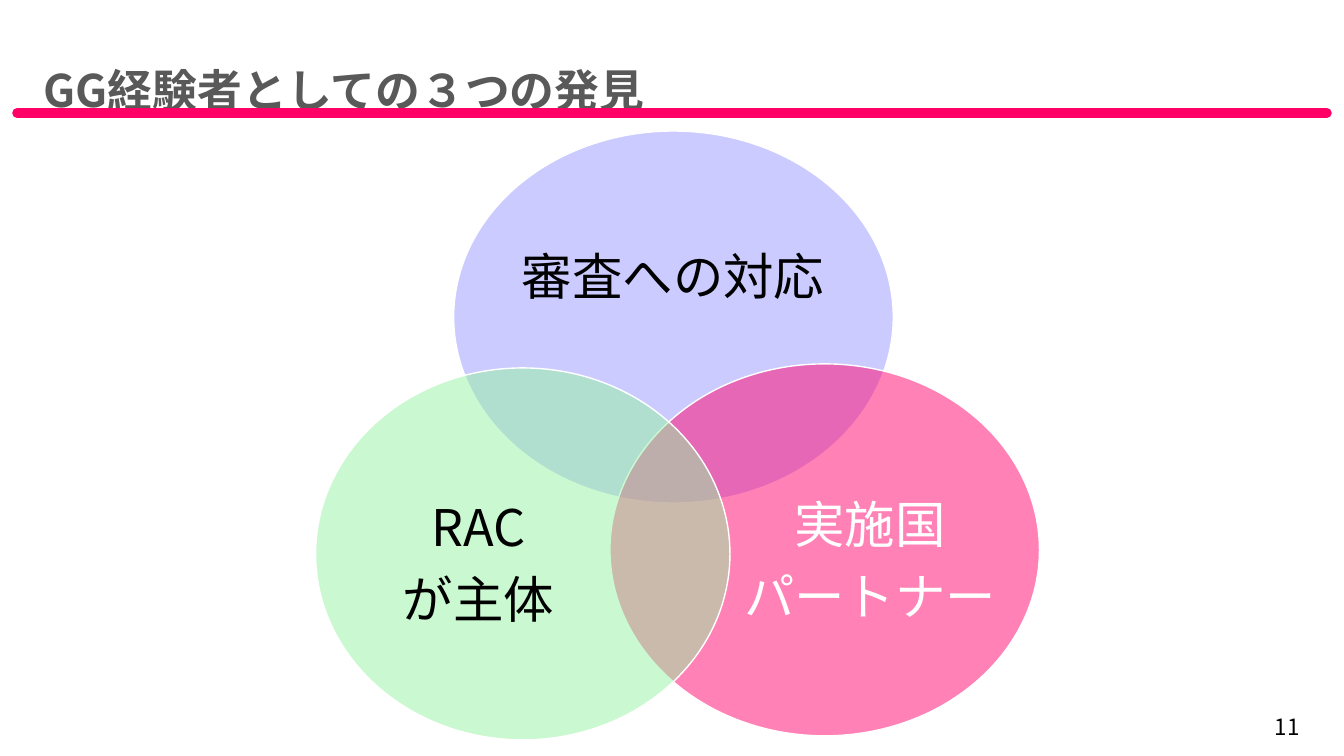
from lxml.etree import SubElement
from pptx import Presentation
from pptx.dml.color import RGBColor
from pptx.enum.shapes import MSO_CONNECTOR, MSO_SHAPE
from pptx.enum.text import MSO_ANCHOR, MSO_AUTO_SIZE, PP_ALIGN
from pptx.oxml.ns import qn
from pptx.util import Inches, Pt

FONT = "Noto Sans CJK JP"
BLACK = RGBColor(0x00, 0x00, 0x00)
WHITE = RGBColor(0xFF, 0xFF, 0xFF)
GRAY = RGBColor(0x59, 0x59, 0x59)
RULE_PINK = RGBColor(0xFF, 0x00, 0x66)
VIOLET = RGBColor(0x99, 0x99, 0xFF)
PINK = RGBColor(0xFF, 0x05, 0x6F)
GREEN = RGBColor(0x97, 0xF3, 0xA2)

# Circle box, fill, label box, label lines, label colour
CIRCLES = [
    ((4.5, 1.3, 4.36, 3.69), VIOLET, (5.08, 1.94, 3.19, 1.66), ["審査への対応"], BLACK),
    ((6.05, 3.61, 4.26, 3.69), PINK, (7.35, 4.57, 2.56, 2.03), ["実施国", "パートナー"], WHITE),
    ((3.13, 3.65, 4.11, 3.69), GREEN, (3.51, 4.6, 2.47, 2.03), ["RAC", "が主体"], BLACK),
]


def inches(box):
    return [Inches(v) for v in box]


def style_paragraph(p, size, color, align, bold=False):
    p.alignment = align
    p.font.name = FONT
    p.font.size = Pt(size)
    p.font.bold = bold
    p.font.color.rgb = color
    SubElement(p._p.pPr.find(qn("a:defRPr")), qn("a:ea"), typeface=FONT)


def space_after_percent(p, percent):
    p.space_after = Pt(0)
    spacing = p._p.pPr.find(qn("a:spcAft"))
    spacing.remove(spacing[0])
    SubElement(spacing, qn("a:spcPct"), val=str(percent * 1000))


def add_title(s, text, box):
    title = s.shapes.title
    title.left, title.top, title.width, title.height = inches(box)
    tf = title.text_frame
    tf.text = text
    tf.word_wrap = True
    tf.auto_size = MSO_AUTO_SIZE.NONE
    tf.vertical_anchor = MSO_ANCHOR.TOP
    p = tf.paragraphs[0]
    p.line_spacing = 2.0
    style_paragraph(p, 32, GRAY, PP_ALIGN.LEFT, bold=True)


def add_rule(s, left, right, y):
    rule = s.shapes.add_connector(
        MSO_CONNECTOR.STRAIGHT, Inches(left), Inches(y), Inches(right), Inches(y))
    rule.line.color.rgb = RULE_PINK
    rule.line.width = Pt(7)
    rule.line._ln.set("cap", "rnd")
    SubElement(rule._element.spPr, qn("a:effectLst"))


def add_circle(s, box, color):
    circle = s.shapes.add_shape(MSO_SHAPE.OVAL, *inches(box))
    circle.shadow.inherit = False
    circle.fill.solid()
    circle.fill.fore_color.rgb = color
    rgb = circle._element.spPr.find(qn("a:solidFill"))[0]
    SubElement(rgb, qn("a:alpha"), val="50000")
    circle.line.color.rgb = WHITE
    circle.line.width = Pt(1)


def add_label(s, box, lines, color):
    tf = s.shapes.add_textbox(*inches(box)).text_frame
    tf.word_wrap = True
    tf.vertical_anchor = MSO_ANCHOR.MIDDLE
    tf.margin_left = tf.margin_right = tf.margin_top = tf.margin_bottom = 0
    tf.text = "\n".join(lines)
    for p in tf.paragraphs:
        p.line_spacing = 0.9
        space_after_percent(p, 35)
        style_paragraph(p, 36, color, PP_ALIGN.CENTER)


def add_page_number(s, number, box):
    tf = s.shapes.add_textbox(*inches(box)).text_frame
    tf.word_wrap = True
    tf.text = number
    style_paragraph(tf.paragraphs[0], 16, BLACK, PP_ALIGN.RIGHT)


def main():
    prs = Presentation()
    prs.slide_width, prs.slide_height = Inches(13.33), Inches(7.5)
    s = prs.slides.add_slide(prs.slide_layouts[5])
    add_title(s, "GG経験者としての３つの発見", (0.33, 0.04, 12.66, 0.98))
    add_rule(s, 0.17, 13.16, 1.12)
    for circle_box, fill, label_box, lines, color in CIRCLES:
        add_circle(s, circle_box, fill)
        add_label(s, label_box, lines, color)
    add_page_number(s, "11", (11.63, 7.03, 1.36, 0.37))
    prs.save("out.pptx")


if __name__ == "__main__":
    main()
